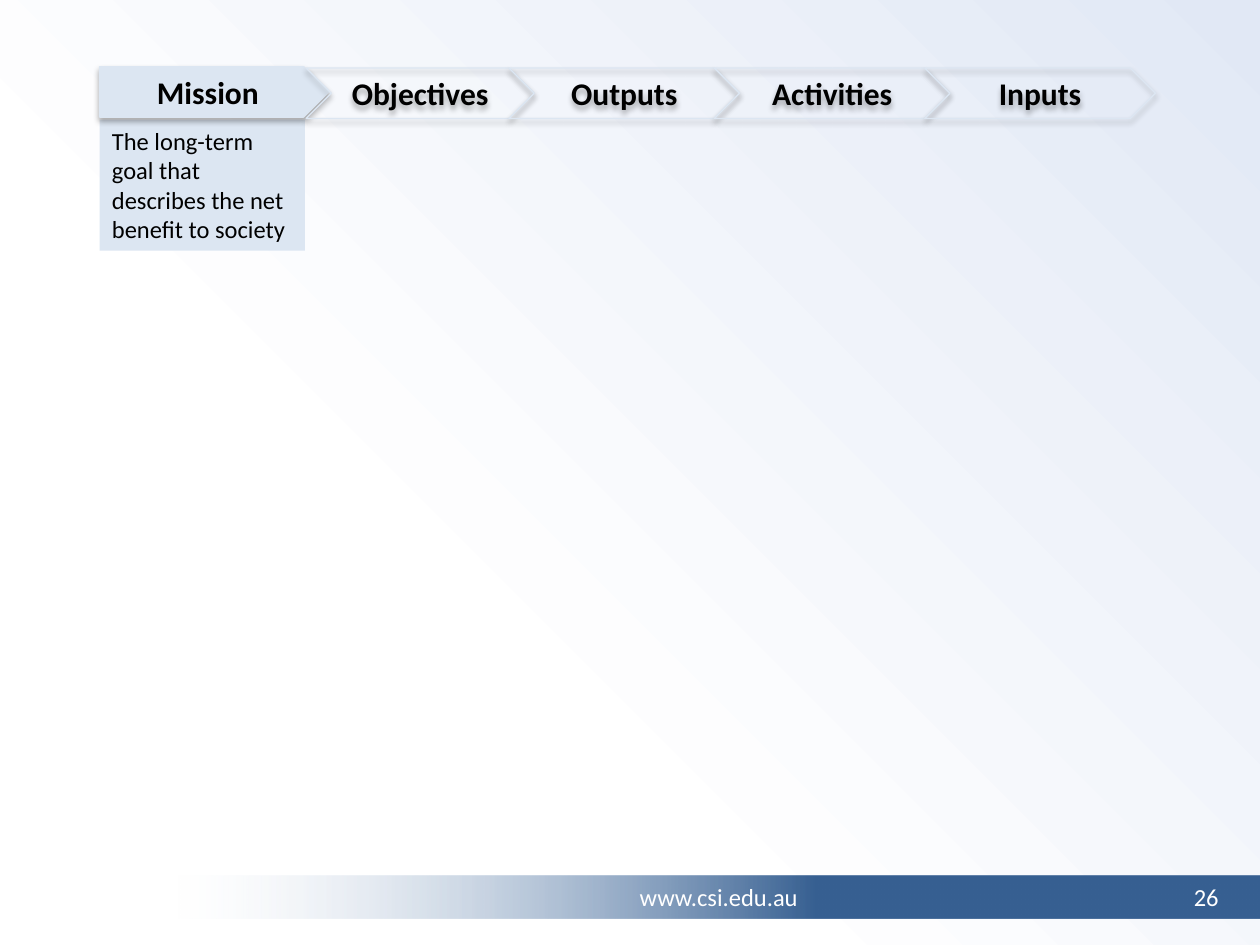
from pptx import Presentation
from pptx.dml.color import RGBColor
from pptx.enum.shapes import MSO_SHAPE as Shape
from pptx.enum.text import MSO_ANCHOR as Anchor, MSO_AUTO_SIZE as AutoSize, PP_ALIGN as Align
from pptx.oxml import parse_xml
from pptx.oxml.ns import nsdecls, qn
from pptx.util import Inches, Pt

BLACK = RGBColor(0x00, 0x00, 0x00)
WHITE = RGBColor(0xFF, 0xFF, 0xFF)
PALE_BLUE = RGBColor(0xDC, 0xE6, 0xF2)
DEEP_BLUE = RGBColor(0x37, 0x60, 0x92)
SKY = RGBColor(0xE1, 0xE8, 0xF5)

LINEAR = '<a:lin ang="0" scaled="0"/>'
FROM_BOTTOM_LEFT = '<a:path path="circle"><a:fillToRect t="100000" r="100000"/></a:path>'
SOFT_SHADOW = (
    f'<a:outerShdw {nsdecls("a")} blurRad="{Pt(3.5)}" dist="{Pt(2.2)}" dir="5400000" '
    'rotWithShape="0"><a:srgbClr val="000000"><a:alpha val="32000"/></a:srgbClr></a:outerShdw>'
)

BAR_HEIGHT = 0.4
POINT = BAR_HEIGHT / 2
LEFT = 0.79
MISSION_WIDTH = 1.82
STAGES = [("Objectives", 1.81), ("Outputs", 1.83), ("Activities", 1.87), ("Inputs", 1.83)]


def set_gradient(fill, element, stops, direction):
    """Fill with (percent, colour, opacity percent) stops."""
    fill.gradient()
    default = element.find(".//" + qn("a:gradFill"))
    stop_xml = "".join(
        f'<a:gs pos="{percent * 1000}"><a:srgbClr val="{colour}">'
        f'<a:alpha val="{opacity * 1000}"/></a:srgbClr></a:gs>'
        for percent, colour, opacity in stops
    )
    default.getparent().replace(default, parse_xml(
        f'<a:gradFill {nsdecls("a")} rotWithShape="1"><a:gsLst>{stop_xml}</a:gsLst>'
        f'{direction}</a:gradFill>'))


def write(shape, text, size=14, colour=BLACK, bold=False, align=Align.LEFT):
    frame = shape.text_frame
    frame.word_wrap = True
    frame.auto_size = AutoSize.SHAPE_TO_FIT_TEXT
    frame.vertical_anchor = Anchor.TOP
    paragraph = frame.paragraphs[0]
    paragraph.alignment = align
    run = paragraph.add_run()
    run.text = text
    run.font.name = "Calibri"
    run.font.size = Pt(size)
    run.font.bold = bold
    run.font.color.rgb = colour


class PlanSlide:
    def __init__(self, slide):
        self.slide = slide

    def background(self):
        set_gradient(self.slide.background.fill, self.slide.element,
                     [(35, WHITE, 100), (100, SKY, 100)], FROM_BOTTOM_LEFT)

    def shape(self, kind, left, top, width, height, fill=None):
        shape = self.slide.shapes.add_shape(
            kind, Inches(left), Inches(top), Inches(width), Inches(height))
        shape.shadow.inherit = False
        shape.line.fill.background()
        if fill is None:
            shape.fill.background()
        else:
            shape.fill.solid()
            shape.fill.fore_color.rgb = fill
        return shape

    def footer(self, address, number):
        top, height = 6.95, 0.34
        band = self.shape(Shape.RECTANGLE, 1.41, top, 8.59, height)
        set_gradient(band.fill, band.element,
                     [(0, PALE_BLUE, 0), (59, DEEP_BLUE, 100)], LINEAR)
        write(band, address, colour=WHITE, align=Align.CENTER)
        page = self.slide.shapes.add_textbox(
            Inches(9.22), Inches(top), Inches(0.55), Inches(height))
        write(page, number, colour=WHITE, align=Align.RIGHT)

    def stage(self, kind, name, left, top, width, fill=None):
        arrow = self.shape(kind, left, top, width, BAR_HEIGHT, fill)
        arrow.line.color.rgb = PALE_BLUE
        arrow.line.width = Pt(0.75)
        effects = arrow.element.spPr.find(qn("a:effectLst"))
        effects.append(parse_xml(SOFT_SHADOW))
        write(arrow, name, size=18, bold=True, align=Align.CENTER)

    def description(self, text, left, top, width, height):
        write(self.shape(Shape.RECTANGLE, left, top, width, height, PALE_BLUE), text)


def main():
    deck = Presentation()
    deck.slide_width, deck.slide_height = Inches(10), Inches(7.5)
    plan = PlanSlide(deck.slides.add_slide(deck.slide_layouts[6]))
    plan.background()
    plan.footer("www.csi.edu.au", "26")
    plan.description("The long-term goal that describes the net benefit to society",
                     LEFT, 0.95, 1.63, 1.04)
    plan.stage(Shape.PENTAGON, "Mission", LEFT, 0.53, MISSION_WIDTH, PALE_BLUE)
    left = LEFT + MISSION_WIDTH - POINT + 0.02
    for name, width in STAGES:
        plan.stage(Shape.CHEVRON, name, left, 0.54, width)
        left += width - POINT
    deck.save("out.pptx")


if __name__ == "__main__":
    main()
